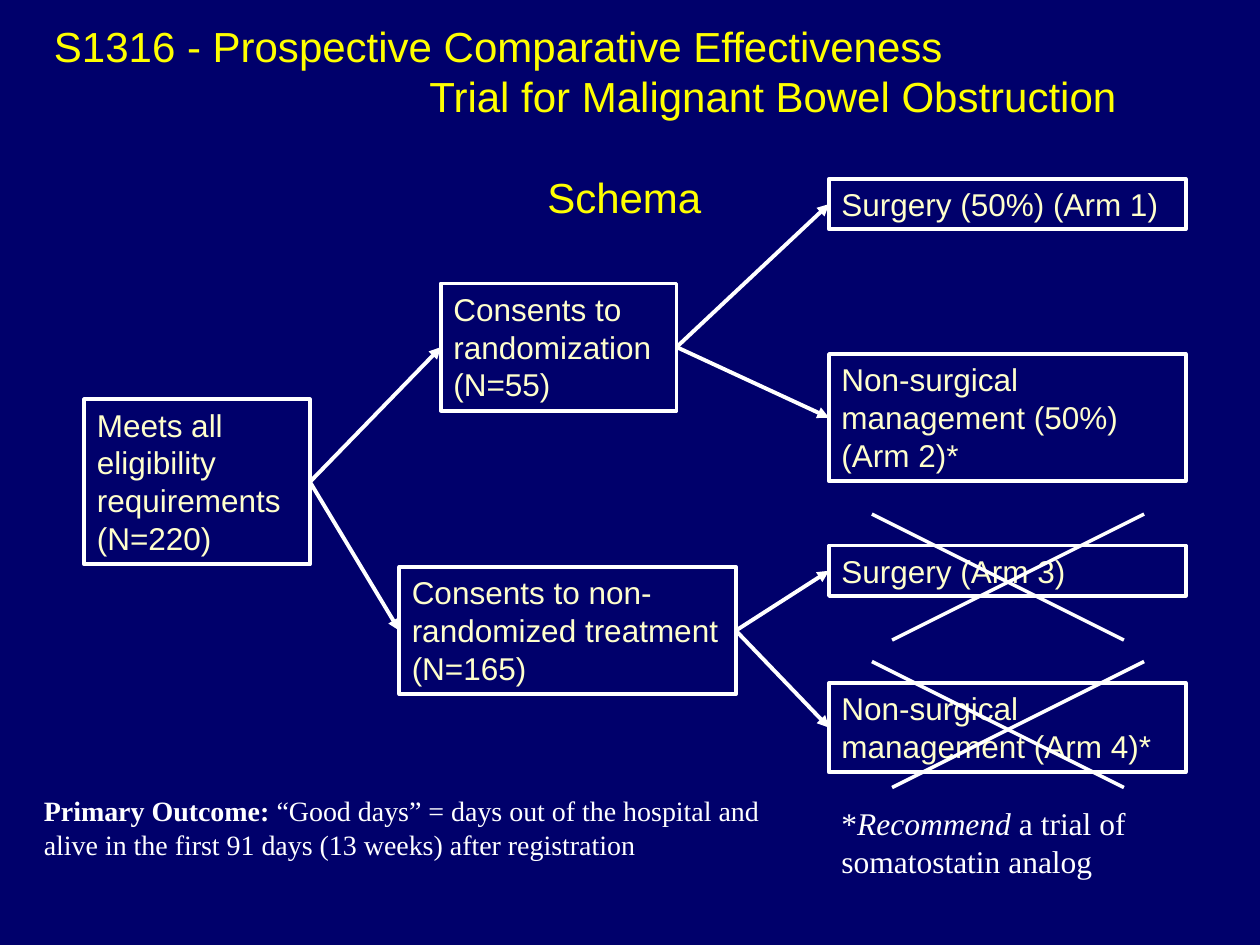
from lxml import etree
from pptx import Presentation
from pptx.dml.color import RGBColor
from pptx.enum.shapes import MSO_CONNECTOR as CONN, MSO_SHAPE as SHAPE
from pptx.enum.text import MSO_ANCHOR as ANCHOR, PP_ALIGN as ALIGN
from pptx.oxml.ns import qn
from pptx.util import Inches, Pt

COLORS = {"back": "00006B", "title": "FFFF00", "box": "FFFFCC", "white": "FFFFFF"}
TITLE = {"size": Pt(24), "name": "Arial"}
BOX = {"size": Pt(18), "name": "Arial"}
OUTCOME = {"size": Pt(16), "name": "Times New Roman"}
FOOTNOTE = {"size": Pt(18), "name": "Times New Roman"}

ARM_X, ARM_W = 6.58, 2.83
BOXES = {
    "eligible": ((0.67, 3.17, 1.79, 1.31), ["Meets all", "eligibility", "requirements (N=220)"]),
    "random": ((3.5, 2.25, 1.87, 1.01), ["Consents to randomization", "(N=55)"]),
    "nonrandom": ((3.17, 4.5, 2.67, 1.01), ["Consents to non-randomized treatment", "(N=165)"]),
    "arm1": ((ARM_X, 1.42, ARM_W, 0.4), ["Surgery (50%) (Arm 1)"]),
    "arm2": ((ARM_X, 2.81, ARM_W, 1.01), ["Non-surgical management (50%) (Arm 2)*"]),
    "arm3": ((ARM_X, 4.33, ARM_W, 0.4), ["Surgery (Arm 3)"]),
    "arm4": ((ARM_X, 5.42, ARM_W, 0.71), ["Non-surgical management (Arm 4)*"]),
}
BRANCHES = {
    "eligible": ["random", "nonrandom"],
    "random": ["arm1", "arm2"],
    "nonrandom": ["arm3", "arm4"],
}


def rgb(key):
    return RGBColor.from_string(COLORS[key])


def add_run(p, text, color, *formats):
    r = p.add_run()
    r.text = text
    for values in formats:
        for key, value in values.items():
            setattr(r.font, key, value)
    r.font.color.rgb = rgb(color)


def add_text(s, box):
    tf = s.shapes.add_textbox(*map(Inches, box)).text_frame
    tf.word_wrap = True
    return tf


def add_title(s, box):
    tf = add_text(s, box)
    tf.vertical_anchor = ANCHOR.MIDDLE
    lines = [
        ("S1316 - Prospective Comparative Effectiveness", ALIGN.LEFT, 0, 0),
        ("Trial for Malignant Bowel Obstruction", ALIGN.LEFT, 2.98, 0),
        ("Schema", ALIGN.CENTER, 0, 28.8),
    ]
    for i, (text, align, indent, before) in enumerate(lines):
        p = tf.add_paragraph() if i else tf.paragraphs[0]
        p.alignment = align
        p.line_spacing = Pt(28.8)
        p.space_before = Pt(before)
        if indent:
            p._p.get_or_add_pPr().set("marL", str(Inches(indent)))
        add_run(p, text, "title", TITLE)


def add_box(s, box, lines):
    sp = s.shapes.add_shape(SHAPE.RECTANGLE, *map(Inches, box))
    sp.shadow.inherit = False
    sp.fill.background()
    sp.line.color.rgb = rgb("white")
    sp.line.width = Pt(2.25)
    tf = sp.text_frame
    tf.word_wrap = True
    tf.vertical_anchor = ANCHOR.TOP
    for i, text in enumerate(lines):
        p = tf.add_paragraph() if i else tf.paragraphs[0]
        p.alignment = ALIGN.LEFT
        add_run(p, text, "box", BOX)
    return sp


def add_line(s, start, end, width):
    line = s.shapes.add_connector(CONN.STRAIGHT, *map(Inches, start + end))
    line.line.color.rgb = rgb("white")
    line.line.width = Pt(width)
    etree.SubElement(line._element.spPr, qn("a:effectLst"))
    return line


def add_arrow(s, start, end, source, target):
    arrow = add_line(s, start, end, 2.25)
    arrow.begin_connect(source, 3)
    arrow.end_connect(target, 1)
    etree.SubElement(arrow.line._get_or_add_ln(), qn("a:tailEnd"), type="triangle")


def add_schema(s):
    shapes = {key: add_box(s, *value) for key, value in BOXES.items()}
    for source, targets in BRANCHES.items():
        x, y, w, h = BOXES[source][0]
        for target in targets:
            tx, ty, _, th = BOXES[target][0]
            add_arrow(s, (x + w, y + h / 2), (tx, ty + th / 2), shapes[source], shapes[target])


def add_cross(s, box):
    x, y, w, h = box
    slant = 0.16
    add_line(s, (x + w, y), (x + slant, y + h), 2)
    add_line(s, (x, y), (x + w - slant, y + h), 2)


def add_note(s, box, values, runs):
    p = add_text(s, box).paragraphs[0]
    for text, style in runs:
        add_run(p, text, "white", values, style)


def main():
    prs = Presentation()
    prs.slide_width, prs.slide_height = Inches(10), Inches(7.5)
    s = prs.slides.add_slide(prs.slide_layouts[6])
    s.background.fill.solid()
    s.background.fill.fore_color.rgb = rgb("back")
    add_title(s, (0.33, 0.5, 9.25, 0.92))
    add_schema(s)
    add_note(s, (0.25, 6.25, 6.25, 0.91), OUTCOME, [
        ("Primary Outcome: ", {"bold": True}),
        ("“Good days” = days out of the hospital and alive in the first 91 days "
         "(13 weeks) after registration", {}),
    ])
    add_note(s, (ARM_X, 6.33, 3.17, 0.71), FOOTNOTE, [
        ("*", {}),
        ("Recommend", {"italic": True}),
        (" a trial of somatostatin analog", {}),
    ])
    for top in (5.25, 4.08):
        add_cross(s, (6.92, top, 2.16, 1))
    prs.save("out.pptx")


if __name__ == "__main__":
    main()
